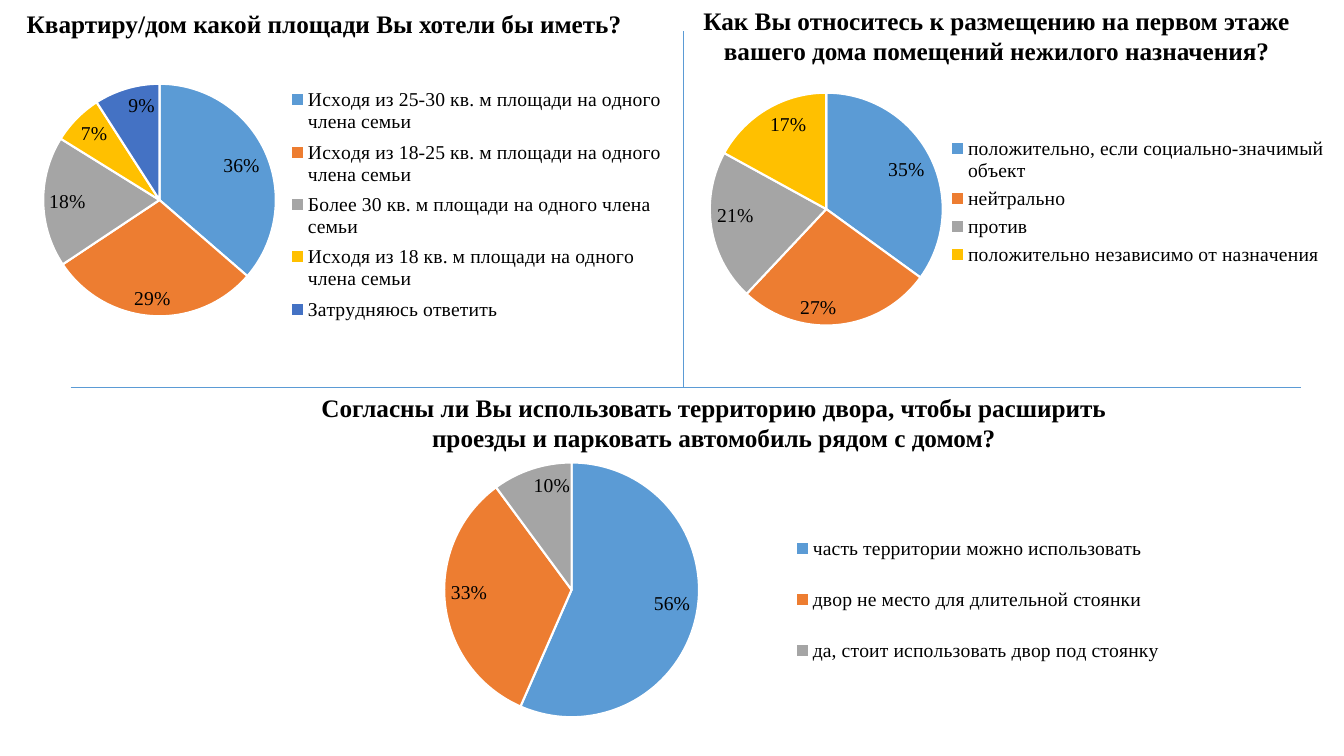
from pptx import Presentation
from pptx.chart.data import CategoryChartData
from pptx.dml.color import RGBColor
from pptx.enum.chart import XL_CHART_TYPE, XL_LABEL_POSITION, XL_LEGEND_POSITION
from pptx.enum.shapes import MSO_CONNECTOR
from pptx.enum.text import MSO_AUTO_SIZE, PP_ALIGN
from pptx.oxml import parse_xml
from pptx.oxml.ns import nsdecls, qn
from pptx.util import Inches, Pt


def color(value):
    return RGBColor.from_string(value)


def set_format(target, values):
    for name, value in values.items():
        setattr(target, name, value)


def manual_layout(bounds, inner=False):
    target = '<c:layoutTarget val="inner"/>' if inner else ""
    modes = "".join(f'<c:{side}Mode val="edge"/>' for side in "xy")
    sizes = "".join(f'<c:{side} val="{value}"/>' for side, value in zip("xywh", bounds))
    return parse_xml(
        f'<c:layout {nsdecls("c")}><c:manualLayout>{target}{modes}{sizes}'
        "</c:manualLayout></c:layout>"
    )


class SurveySlide:
    black = "000000"
    accent = "5B9BD5"
    palette = [accent, "ED7D31", "A5A5A5", "FFC000", "4472C4"]
    heading_font = {"name": "Times New Roman", "size": Pt(18), "bold": True}
    chart_font = {"name": "Calibri", "size": Pt(10)}
    caption_font = {"name": "Times New Roman", "size": Pt(14), "bold": False}
    label_format = {
        "show_value": True,
        "show_percentage": False,
        "number_format": '0"%"',
        "number_format_is_linked": False,
        "position": XL_LABEL_POSITION.INSIDE_END,
    }
    legend_format = {"position": XL_LEGEND_POSITION.RIGHT, "include_in_layout": False}

    def __init__(self, slide):
        self.slide = slide

    def style_font(self, font, values):
        set_format(font, values)
        font.color.rgb = color(self.black)

    def question(self, text, bounds):
        frame = self.slide.shapes.add_textbox(*map(Inches, bounds)).text_frame
        set_format(frame, {"word_wrap": True, "auto_size": MSO_AUTO_SIZE.SHAPE_TO_FIT_TEXT})
        paragraph = frame.paragraphs[0]
        paragraph.alignment = PP_ALIGN.CENTER
        run = paragraph.add_run()
        run.text = text
        self.style_font(run.font, self.heading_font)

    def divider(self, *ends):
        line = self.slide.shapes.add_connector(MSO_CONNECTOR.STRAIGHT, *map(Inches, ends))
        line.line.color.rgb = color(self.accent)
        line.line.width = Pt(0.5)
        line.element.spPr.append(parse_xml(f'<a:effectLst {nsdecls("a")}/>'))

    def pie(self, answers, bounds, plot_bounds, legend_bounds):
        data = CategoryChartData()
        data.categories = list(answers)
        data.add_series("Доля ответов", list(answers.values()))
        chart = self.slide.shapes.add_chart(
            XL_CHART_TYPE.PIE, *map(Inches, bounds), data
        ).chart
        set_format(chart, {"has_title": False, "has_legend": True})
        self.style_font(chart.font, self.chart_font)
        set_format(chart.legend, self.legend_format)
        self.style_font(chart.legend.font, self.caption_font)

        plot = chart.plots[0]
        set_format(plot, {"vary_by_categories": True, "has_data_labels": True})
        set_format(plot.data_labels, self.label_format)
        self.style_font(plot.data_labels.font, self.caption_font)
        for index, fill_color in enumerate(self.palette[:len(answers)]):
            slice_format = plot.series[0].points[index].format
            slice_format.fill.solid()
            slice_format.fill.fore_color.rgb = color(fill_color)
            slice_format.line.color.rgb = color("FFFFFF")
            slice_format.line.width = Pt(1.5)

        plot_area = chart.element.find(".//" + qn("c:plotArea"))
        legend = chart.element.find(".//" + qn("c:legend"))
        for area in (plot_area, legend):
            for layout in area.findall(qn("c:layout")):
                area.remove(layout)
        plot_area.insert(0, manual_layout(plot_bounds, inner=True))
        legend.find(qn("c:overlay")).addprevious(manual_layout(legend_bounds))


def main():
    presentation = Presentation()
    set_format(presentation, {"slide_width": Inches(13.33), "slide_height": Inches(7.5)})
    survey = SurveySlide(presentation.slides.add_slide(presentation.slide_layouts[6]))

    survey.question("Квартиру/дом какой площади Вы хотели бы иметь?", (-0.12, 0.03, 6.67, 0.4))
    survey.question(
        "Как Вы относитесь к размещению на первом этаже вашего дома "
        "помещений нежилого назначения?",
        (6.55, 0, 6.67, 0.71),
    )
    survey.divider(6.78, 0.31, 6.78, 3.84)
    survey.divider(0.7, 3.84, 12.9, 3.84)
    survey.question(
        "Согласны ли Вы использовать территорию двора, чтобы расширить "
        "проезды и парковать автомобиль рядом с домом?",
        (3.01, 3.84, 8.14, 0.71),
    )

    ground_floor = {
        "положительно, если социально-значимый объект": 35,
        "нейтрально": 27,
        "против": 21,
        "положительно независимо от назначения": 17,
    }
    courtyard = {
        "часть территории можно использовать": 56,
        "двор не место для длительной стоянки": 33,
        "да, стоит использовать двор под стоянку": 10,
    }
    living_area = {
        "Исходя из 25-30 кв. м площади на одного члена семьи": 36,
        "Исходя из 18-25 кв. м площади на одного члена семьи": 29,
        "Более 30 кв. м площади на одного члена семьи": 18,
        "Исходя из 18 кв. м площади на одного члена семьи": 7,
        "Затрудняюсь ответить": 9,
    }
    survey.pie(ground_floor, (6.34, 0.5, 6.87, 3), (0.1, 0.14, 0.34, 0.77), (0.44, 0.27, 0.56, 0.46))
    survey.pie(courtyard, (2.61, 4.2, 9.27, 3.24), (0.08, 0.12, 0.5, 0.78), (0.55, 0.26, 0.43, 0.56))
    survey.pie(living_area, (-0.34, 0.5, 6.99, 3), (0.11, 0.11, 0.33, 0.77), (0.45, 0.1, 0.55, 0.82))

    presentation.save("out.pptx")


if __name__ == "__main__":
    main()
